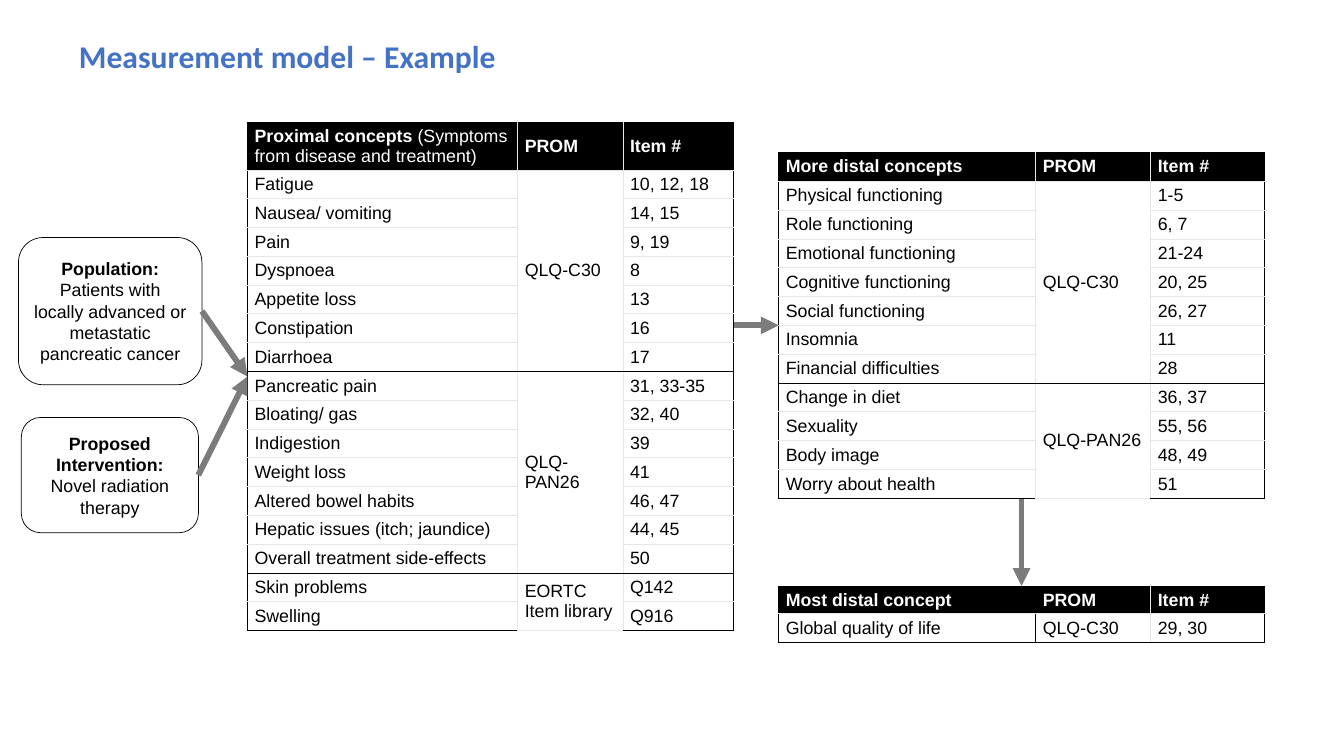
from dataclasses import dataclass

from lxml import etree
from pptx import Presentation
from pptx.dml.color import RGBColor
from pptx.enum.shapes import MSO_CONNECTOR, MSO_SHAPE
from pptx.enum.text import MSO_ANCHOR, MSO_AUTO_SIZE, PP_ALIGN
from pptx.oxml.ns import qn
from pptx.util import Inches, Pt

ROUNDED = MSO_SHAPE.ROUNDED_RECTANGLE
STRAIGHT = MSO_CONNECTOR.STRAIGHT
MIDDLE, BOTTOM = MSO_ANCHOR.MIDDLE, MSO_ANCHOR.BOTTOM
NO_AUTOFIT = MSO_AUTO_SIZE.NONE
LEFT, CENTER = PP_ALIGN.LEFT, PP_ALIGN.CENTER

COLUMNS, ROWS = 189, 106.3
UNIT = Inches(0.1)
TITLE_ONLY = 5


@dataclass(frozen=True)
class Theme:
    title_font: str = "Calibri"
    body_font: str = "Arial"
    title_size: float = 32
    body_size: float = 18
    title: str = "4472C4"
    ink: str = "000000"
    paper: str = "FFFFFF"
    rule: str = "E7E6E6"
    arrow: str = "7C7C7C"
    outline_width: float = 0.75
    rule_width: float = 1
    arrow_width: float = 6


@dataclass(frozen=True)
class Box:
    left: float
    top: float
    width: float
    height: float

    @property
    def right(self):
        return self.left + self.width

    @property
    def bottom(self):
        return self.top + self.height

    @property
    def center(self):
        return self.left + self.width / 2

    @property
    def middle(self):
        return self.top + self.height / 2

    def emu(self):
        return [grid(v) for v in (self.left, self.top, self.width, self.height)]


THEME = Theme()

TITLE = Box(10.1, 3.9, 160.1, 7.2)
POPULATION = Box(2.6, 33.4, 25.8, 20.7)
INTERVENTION = Box(3, 58.7, 24.9, 16.2)
PROXIMAL = Box(34.8, 17.2, 68.4, 71.5)
DISTAL = Box(109.5, 21.4, 68.3, 48.7)
MOST_DISTAL = Box(109.5, 82.4, 68.3, 8)

PROXIMAL_HEAD = [("Proximal concepts ", True),
                 ("(Symptoms from disease and treatment)", False)]
PROXIMAL_GROUPS = [
    ("QLQ-C30", [("Fatigue", "10, 12, 18"), ("Nausea/ vomiting", "14, 15"),
                 ("Pain", "9, 19"), ("Dyspnoea", "8"), ("Appetite loss", "13"),
                 ("Constipation", "16"), ("Diarrhoea", "17")]),
    ("QLQ-PAN26", [("Pancreatic pain", "31, 33-35"), ("Bloating/ gas", "32, 40"),
                   ("Indigestion", "39"), ("Weight loss", "41"),
                   ("Altered bowel habits", "46, 47"),
                   ("Hepatic issues (itch; jaundice)", "44, 45"),
                   ("Overall treatment side-effects", "50")]),
    ("EORTC Item library", [("Skin problems", "Q142"), ("Swelling", "Q916")]),
]
DISTAL_GROUPS = [
    ("QLQ-C30", [("Physical functioning", "1-5"), ("Role functioning", "6, 7"),
                 ("Emotional functioning", "21-24"),
                 ("Cognitive functioning", "20, 25"),
                 ("Social functioning", "26, 27"), ("Insomnia", "11"),
                 ("Financial difficulties", "28")]),
    ("QLQ-PAN26", [("Change in diet", "36, 37"), ("Sexuality", "55, 56"),
                   ("Body image", "48, 49"), ("Worry about health", "51")]),
]
MOST_DISTAL_GROUPS = [("QLQ-C30", [("Global quality of life", "29, 30")])]


def grid(units):
    return round(units * UNIT)


def rgb(code):
    return RGBColor.from_string(code)


def write(frame, paragraphs, color, align=LEFT):
    for index, pieces in enumerate(paragraphs):
        paragraph = frame.add_paragraph() if index else frame.paragraphs[0]
        paragraph.alignment = align
        for words, bold in pieces:
            run = paragraph.add_run()
            run.text = words
            run.font.name = THEME.body_font
            run.font.size = Pt(THEME.body_size)
            run.font.bold = bold
            run.font.color.rgb = rgb(color)


def add_title(slide, box, words):
    title = slide.shapes.title
    title.left, title.top, title.width, title.height = box.emu()
    frame = title.text_frame
    frame.text = words
    frame.vertical_anchor = BOTTOM
    frame.auto_size = NO_AUTOFIT
    paragraph = frame.paragraphs[0]
    paragraph.alignment = LEFT
    paragraph.line_spacing = 0.9
    font = paragraph.runs[0].font
    font.name, font.size, font.bold = THEME.title_font, Pt(THEME.title_size), True
    font.color.rgb = rgb(THEME.title)


def add_card(slide, box, paragraphs):
    card = slide.shapes.add_shape(ROUNDED, *box.emu())
    card.shadow.inherit = False
    card.fill.background()
    card.line.color.rgb = rgb(THEME.ink)
    card.line.width = Pt(THEME.outline_width)
    card.text_frame.word_wrap = True
    card.text_frame.vertical_anchor = MIDDLE
    write(card.text_frame, paragraphs, THEME.ink, CENTER)


def add_arrow(slide, start, end):
    arrow = slide.shapes.add_connector(STRAIGHT, *map(grid, start + end))
    arrow.line.color.rgb = rgb(THEME.arrow)
    arrow.line.width = Pt(THEME.arrow_width)
    etree.SubElement(arrow.line._get_or_add_ln(), qn("a:tailEnd"), type="triangle")
    etree.SubElement(arrow._element.spPr, qn("a:effectLst"))


def set_borders(cell, colors):
    properties = cell._tc.get_or_add_tcPr()
    for index, (side, color) in enumerate(zip("LRTB", colors)):
        border = etree.Element(qn(f"a:ln{side}"), w=str(Pt(THEME.rule_width)))
        fill = etree.SubElement(border, qn("a:solidFill"))
        etree.SubElement(fill, qn("a:srgbClr"), val=color)
        properties.insert(index, border)


def add_concepts(slide, box, head, groups, weights, head_height, divider=THEME.rule):
    rows = [(head, "PROM", "Item #")]
    starts, ends = {0}, set()
    for prom, concepts in groups:
        if len(rows) > 1:
            starts.add(len(rows))
        rows += [([(concept, False)], "" if index else prom, item)
                 for index, (concept, item) in enumerate(concepts)]
        ends.add(len(rows) - 1)
    table = slide.shapes.add_table(len(rows), len(weights), *box.emu()).table
    table.first_row = table.horz_banding = False
    for column, weight in zip(table.columns, weights):
        column.width = grid(box.width * weight / sum(weights))
    row_height = (box.height - head_height) / (len(rows) - 1)
    last = len(weights) - 1
    for r, (concept, prom, item) in enumerate(rows):
        is_head = r == 0
        table.rows[r].height = grid(head_height if is_head else row_height)
        for c, pieces in enumerate((concept, [(prom, is_head)], [(item, is_head)])):
            cell = table.cell(r, c)
            cell.vertical_anchor = MIDDLE
            if is_head:
                cell.fill.solid()
                cell.fill.fore_color.rgb = rgb(THEME.ink)
            else:
                cell.fill.background()
            if pieces[0][0]:
                write(cell.text_frame, [pieces], THEME.paper if is_head else THEME.ink)
            inner = {0: THEME.ink, 1: divider, last + 1: THEME.ink}
            set_borders(cell, (inner.get(c, THEME.rule), inner.get(c + 1, THEME.rule),
                               THEME.ink if r in starts else THEME.rule,
                               THEME.ink if r in ends else THEME.rule))
    first = 1
    for prom, concepts in groups:
        if len(concepts) > 1:
            table.cell(first, 1).merge(table.cell(first + len(concepts) - 1, 1))
        first += len(concepts)


def build_measurement_model(slide):
    add_title(slide, TITLE, "Measurement model – Example")
    add_card(slide, INTERVENTION, [[("Proposed Intervention:", True)],
                                   [("Novel radiation therapy", False)]])
    add_card(slide, POPULATION, [[
        ("Population: ", True),
        ("Patients with locally advanced or metastatic pancreatic cancer", False)]])
    add_concepts(slide, PROXIMAL, PROXIMAL_HEAD, PROXIMAL_GROUPS, (38, 14.8, 15.6), 6.7)
    distal_weights = (36.2, 16.2, 16)
    add_concepts(slide, DISTAL, [("More distal concepts", True)], DISTAL_GROUPS,
                 distal_weights, 4.1)
    add_concepts(slide, MOST_DISTAL, [("Most distal concept", True)],
                 MOST_DISTAL_GROUPS, distal_weights, 3.9, THEME.ink)
    for card in (POPULATION, INTERVENTION):
        add_arrow(slide, (card.right, card.middle), (PROXIMAL.left, PROXIMAL.middle))
    add_arrow(slide, (PROXIMAL.right, DISTAL.middle), (DISTAL.left, DISTAL.middle))
    add_arrow(slide, (DISTAL.center, DISTAL.bottom), (DISTAL.center, MOST_DISTAL.top))


def main():
    deck = Presentation()
    deck.slide_width, deck.slide_height = grid(COLUMNS), grid(ROWS)
    build_measurement_model(deck.slides.add_slide(deck.slide_layouts[TITLE_ONLY]))
    deck.save("out.pptx")


if __name__ == "__main__":
    main()
